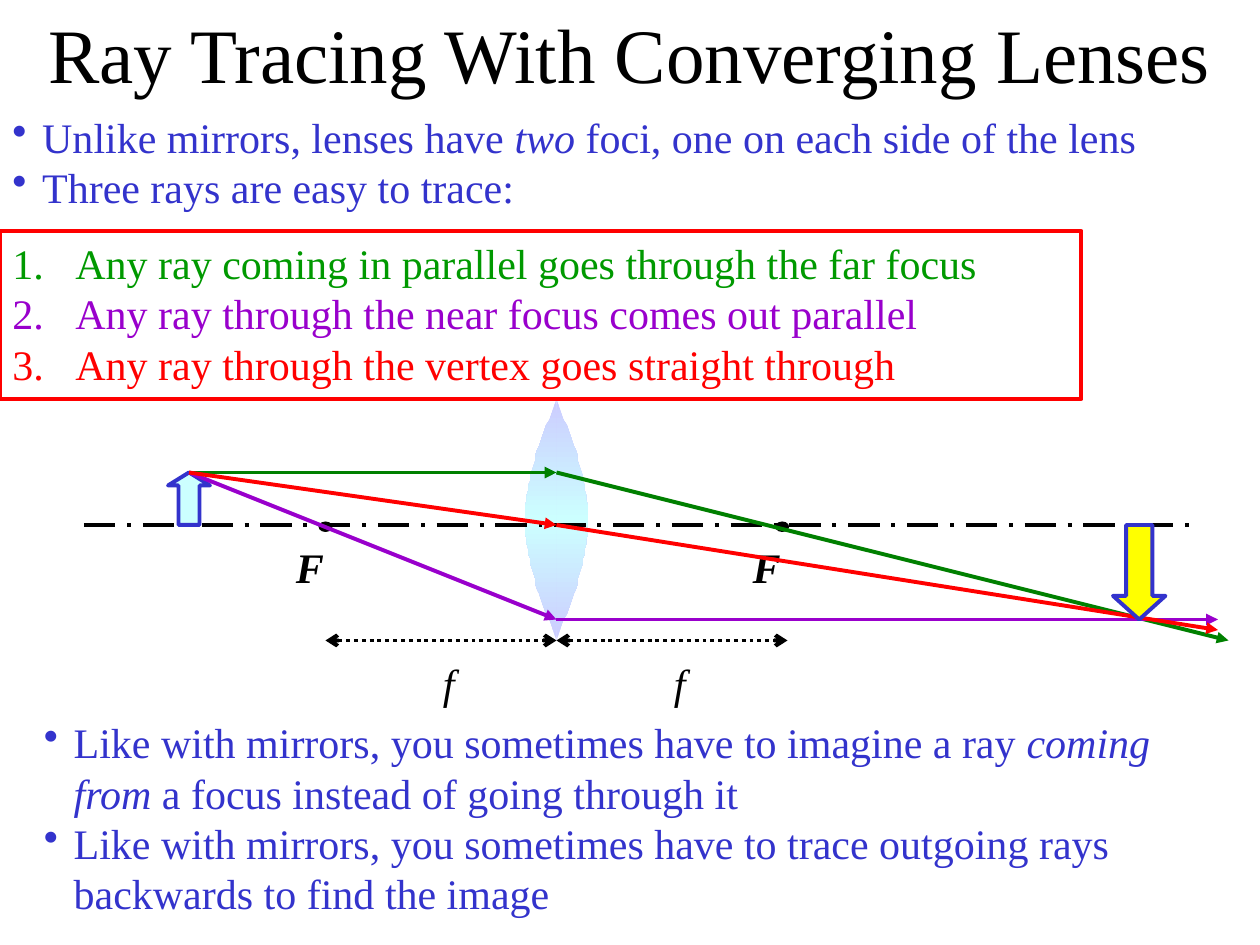
from copy import deepcopy
from dataclasses import dataclass

from lxml import etree
from pptx import Presentation
from pptx.dml.color import RGBColor
from pptx.enum.dml import MSO_LINE
from pptx.enum.shapes import MSO_CONNECTOR, MSO_SHAPE
from pptx.enum.text import MSO_ANCHOR, MSO_AUTO_SIZE, PP_ALIGN
from pptx.oxml.ns import qn
from pptx.util import Pt

LEFT, CENTER = PP_ALIGN.LEFT, PP_ALIGN.CENTER
TOP, GROW = MSO_ANCHOR.TOP, MSO_AUTO_SIZE.SHAPE_TO_FIT_TEXT
RECT, OVAL = MSO_SHAPE.RECTANGLE, MSO_SHAPE.OVAL
UP, DOWN = MSO_SHAPE.UP_ARROW, MSO_SHAPE.DOWN_ARROW
STRAIGHT = MSO_CONNECTOR.STRAIGHT
AXIS_DASH, SPAN_DASH = MSO_LINE.LONG_DASH_DOT, MSO_LINE.ROUND_DOT


@dataclass(frozen=True)
class Theme:
    font: str = "Times New Roman"
    head: int = 44
    body: int = 24
    line: float = 2.25
    black: str = "000000"
    blue: str = "3333CC"
    leaf: str = "009900"
    green: str = "008000"
    purple: str = "9900CC"
    red: str = "FF0000"
    yellow: str = "FFFF00"
    cyan: str = "CCFFFF"
    lilac: str = "CCCCFF"


class Board:
    def __init__(self, slide, theme):
        self.slide, self.shapes, self.theme = slide, slide.shapes, theme

    def style(self, run, color, size=None, bold=False, italic=False):
        font = run.font
        font.name, font.size = self.theme.font, Pt(size or self.theme.body)
        font.bold, font.italic = bold, italic
        font.color.rgb = RGBColor.from_string(color)

    def frame(self, shape):
        frame = shape.text_frame
        frame.word_wrap, frame.auto_size = True, GROW
        frame.vertical_anchor = TOP
        return frame

    def title(self, text, box):
        shape = self.shapes.title
        shape.left, shape.top, shape.width, shape.height = map(Pt, box)
        frame = self.frame(shape)
        frame.text = text
        para = frame.paragraphs[0]
        para.alignment = CENTER
        self.style(para.runs[0], self.theme.black, self.theme.head)

    def list(self, frame, items, mark, indent):
        """Fill a frame with (text, color) items; *stars* set italics."""
        for i, (text, color) in enumerate(items):
            para = frame.add_paragraph() if i else frame.paragraphs[0]
            para.alignment = LEFT
            props = para._p.get_or_add_pPr()
            props.set("marL", str(Pt(indent)))
            props.set("indent", str(-Pt(indent)))
            tag, key, value = mark
            etree.SubElement(props, qn(tag)).set(key, value)
            for j, part in enumerate(text.split("*")):
                if part:
                    run = para.add_run()
                    run.text = part
                    self.style(run, color, italic=j % 2 == 1)

    def bullets(self, box, texts):
        frame = self.frame(self.shapes.add_textbox(*map(Pt, box)))
        items = [(text, self.theme.blue) for text in texts]
        self.list(frame, items, ("a:buChar", "char", "•"), 17)

    def steps(self, box, items):
        shape = self.shape(RECT, box, line=self.theme.red)
        mark = ("a:buAutoNum", "type", "arabicPeriod")
        self.list(self.frame(shape), items, mark, 36)

    def label(self, text, x, y, bold=False):
        frame = self.frame(self.shapes.add_textbox(Pt(x), Pt(y), Pt(48), Pt(36)))
        frame.text = text
        run = frame.paragraphs[0].runs[0]
        self.style(run, self.theme.black, bold=bold, italic=True)

    def shape(self, kind, box, fill=None, line=None):
        shape = self.shapes.add_shape(kind, *map(Pt, box))
        shape.shadow.inherit = False
        if fill:
            shape.fill.solid()
            shape.fill.fore_color.rgb = RGBColor.from_string(fill)
        else:
            shape.fill.background()
        if line:
            shape.line.color.rgb = RGBColor.from_string(line)
            shape.line.width = Pt(self.theme.line)
        else:
            shape.line.fill.background()
        return shape

    def arrow(self, kind, box, fill, head):
        shape = self.shape(kind, box, fill, self.theme.blue)
        shape.adjustments[0], shape.adjustments[1] = 0.5, head

    def line(self, start, end, color, dash=None, head=None, tail=None):
        link = self.shapes.add_connector(STRAIGHT, *map(Pt, start + end))
        link.line.color.rgb = RGBColor.from_string(color)
        link.line.width = Pt(self.theme.line)
        if dash:
            link.line.dash_style = dash
        props = link._element.spPr
        for tag, kind in (("a:headEnd", head), ("a:tailEnd", tail)):
            if kind:
                etree.SubElement(props.find(qn("a:ln")), qn(tag)).set("type", kind)
        etree.SubElement(props, qn("a:effectLst"))

    def ray(self, color, *points):
        for start, end in zip(points, points[1:]):
            self.line(start, end, color, tail="triangle")

    def lens(self, x, top, low, bulge):
        """Draw one half of the lens; the sign of bulge picks the side."""
        mid, n = (top + low) / 2, 24
        curve = []
        for i in range(2 * n + 1):
            t = abs(i / n - 1)
            side = bulge * ((1 - t) ** 3 + 3 * (1 - t) ** 2 * t + 1.5 * (1 - t) * t * t)
            rise = (mid - top) * (0.96 * t * (1 - t) ** 2 + 1.96 * t * t * (1 - t) + t ** 3)
            curve.append((x + side, mid - rise if i < n else mid + rise))
        build = self.shapes.build_freeform(*curve[0], scale=Pt(1))
        build.add_line_segments(curve[1:], close=True)
        shape = build.convert_to_shape()
        shape.shadow.inherit = False
        shape.line.fill.background()
        shape.fill.gradient()
        shape.fill.gradient_angle = 90
        stops = shape._element.spPr.find(".//" + qn("a:gsLst"))
        stops.insert(1, deepcopy(stops[0]))
        colors = (self.theme.lilac, self.theme.cyan, self.theme.lilac)
        for i, (stop, color) in enumerate(zip(shape.fill.gradient_stops, colors)):
            stop.position = i / 2
            stop.color.rgb = RGBColor.from_string(color)


def main():
    deck = Presentation()
    deck.slide_width, deck.slide_height = Pt(720), Pt(540)
    theme = Theme()
    board = Board(deck.slides.add_slide(deck.slide_layouts[5]), theme)

    mid, axis, base, focal = 318, 300, 366, 132
    tip, center = (108, 270), (mid, axis)

    board.title("Ray Tracing With Converging Lenses", (0, 0, 720, 60))
    board.bullets((0, 60, 666, 65), [
        "Unlike mirrors, lenses have* two* foci, one on each side of the lens",
        "Three rays are easy to trace:",
    ])
    for bulge in (-18, 18):
        board.lens(mid, 228, base, bulge)
    board.steps((0, 132, 618, 96), [
        ("Any ray coming in parallel goes through the far focus", theme.leaf),
        ("Any ray through the near focus comes out parallel", theme.purple),
        ("Any ray through the vertex goes straight through", theme.red),
    ])

    board.line((48, axis), (684, axis), theme.black, AXIS_DASH)
    for x in (mid - focal, mid):
        board.line((x, base), (x + focal, base), theme.black, SPAN_DASH,
                   "arrow", "arrow")
        board.label("f", x + 60, 372)
    for x in (182, 443):
        board.shape(OVAL, (x, 298, 8, 6), theme.black)
        board.label("F", x - 20, 306, bold=True)

    board.arrow(UP, (96, 270, 24, 30), theme.cyan, 0.31)
    board.ray(theme.green, tip, (mid, 270), (702, base))
    board.ray(theme.purple, tip, (mid, 354), (696, 354))
    board.ray(theme.red, tip, center, (696, 360))
    board.arrow(DOWN, (636, axis, 30, 54), theme.yellow, 0.45)

    board.bullets((18, 406, 666, 122), [
        "Like with mirrors, you sometimes have to imagine a ray *coming from*"
        " a focus instead of going through it",
        "Like with mirrors, you sometimes have to trace outgoing rays"
        " backwards to find the image",
    ])
    deck.save("out.pptx")


if __name__ == "__main__":
    main()
